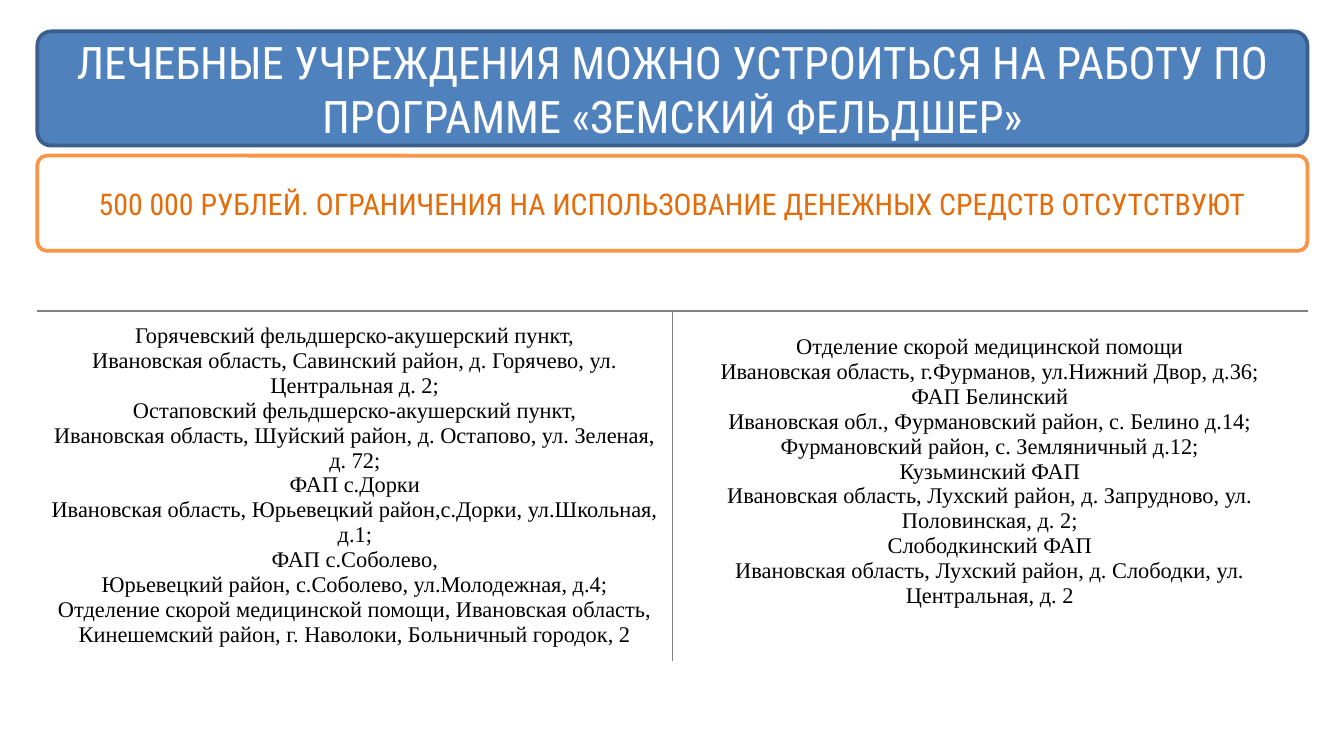
from lxml import etree
from pptx import Presentation
from pptx.dml.color import RGBColor
from pptx.enum import shapes, text
from pptx.oxml import ns
from pptx.util import Pt

LEFT, WIDTH = 20, 680.4
WHITE, GREY, BLACK = "FFFFFF", "808080", "000000"
LEFT_ADDRESSES = [
    "Горячевский фельдшерско-акушерский пункт,",
    "Ивановская область, Савинский район, д. Горячево, ул. Центральная д. 2;",
    "Остаповский фельдшерско-акушерский пункт,",
    "Ивановская область, Шуйский район, д. Остапово, ул. Зеленая, д. 72;",
    "ФАП с.Дорки",
    "Ивановская область, Юрьевецкий район,с.Дорки, ул.Школьная, д.1;",
    "ФАП с.Соболево,",
    "Юрьевецкий район, с.Соболево, ул.Молодежная, д.4;",
    "Отделение скорой медицинской помощи, Ивановская область, "
    "Кинешемский район, г. Наволоки, Больничный городок, 2",
]
RIGHT_ADDRESSES = [
    "Отделение скорой медицинской помощи",
    "Ивановская область, г.Фурманов, ул.Нижний Двор, д.36;",
    "ФАП Белинский",
    "Ивановская обл., Фурмановский район, с. Белино д.14;",
    "Фурмановский район, с. Земляничный д.12;",
    "Кузьминский ФАП",
    "Ивановская область, Лухский район, д. Запрудново, ул. Половинская, д. 2;",
    "Слободкинский ФАП",
    "Ивановская область, Лухский район, д. Слободки, ул. Центральная, д. 2",
]


def paint(color_format, color):
    color_format.rgb = RGBColor.from_string(color)


def fill_solid(fill, color):
    fill.solid()
    paint(fill.fore_color, color)


def format_text(text_frame, font_name, size, color):
    for paragraph in text_frame.paragraphs:
        paragraph.alignment = text.PP_ALIGN.CENTER
        for run in paragraph.runs:
            run.font.name = font_name
            run.font.size = Pt(size)
            paint(run.font.color, color)


def add_banner(slide, box, words, size, text_color, fill_color, line_color, rounding):
    shape = slide.shapes.add_shape(
        shapes.MSO_SHAPE.ROUNDED_RECTANGLE, *[Pt(length) for length in box])
    shape.adjustments[0] = rounding
    shape.shadow.inherit = False
    fill_solid(shape.fill, fill_color)
    paint(shape.line.color, line_color)
    shape.line.width = Pt(2)
    text_frame = shape.text_frame
    text_frame.word_wrap = True
    text_frame.vertical_anchor = text.MSO_ANCHOR.MIDDLE
    text_frame.text = words
    format_text(text_frame, "Roboto Condensed", size, text_color)


def set_borders(cell, left=WHITE, right=WHITE, top=WHITE, bottom=WHITE):
    properties = cell._tc.get_or_add_tcPr()
    sides = {"a:lnL": left, "a:lnR": right, "a:lnT": top, "a:lnB": bottom}
    for index, (tag, color) in enumerate(sides.items()):
        line = etree.Element(ns.qn(tag), w=str(Pt(1)))
        solid = etree.SubElement(line, ns.qn("a:solidFill"))
        etree.SubElement(solid, ns.qn("a:srgbClr"), val=color)
        properties.insert(index, line)


def add_address_table(slide, box, heading_height, columns):
    left, top, width, height = box
    frame = slide.shapes.add_table(
        2, len(columns), Pt(left), Pt(top), Pt(width), Pt(height))
    table = frame.table
    table.first_row = table.horz_banding = False
    table.rows[0].height = Pt(heading_height)
    table.rows[1].height = Pt(height - heading_height)
    for cell in table.iter_cells():
        cell.fill.background()
        cell.vertical_anchor = text.MSO_ANCHOR.MIDDLE

    heading = table.cell(0, 0)
    heading.merge(table.cell(0, len(columns) - 1))
    heading.margin_top = heading.margin_bottom = 0
    for index, addresses in enumerate(columns):
        set_borders(table.cell(0, index), bottom=GREY)
        cell = table.cell(1, index)
        cell.text_frame.text = "\n".join(addresses)
        format_text(cell.text_frame, "Times New Roman", 12, BLACK)
        set_borders(cell, top=GREY,
                    left=GREY if index else WHITE,
                    right=GREY if index < len(columns) - 1 else WHITE)
    # The shorter last column sits slightly above the middle.
    table.cell(1, len(columns) - 1).margin_bottom = Pt(18.6)


def main():
    presentation = Presentation()
    presentation.slide_width, presentation.slide_height = Pt(720), Pt(405)
    slide = presentation.slides.add_slide(presentation.slide_layouts[6])
    add_banner(slide, (LEFT, 16.8, WIDTH, 61.2),
               "ЛЕЧЕБНЫЕ УЧРЕЖДЕНИЯ МОЖНО УСТРОИТЬСЯ НА РАБОТУ ПО "
               "ПРОГРАММЕ «ЗЕМСКИЙ ФЕЛЬДШЕР»",
               24, WHITE, "4F81BD", "3A5F8C", 0.12)
    add_banner(slide, (LEFT, 83.4, WIDTH, 51),
               "500 000 РУБЛЕЙ. ОГРАНИЧЕНИЯ НА ИСПОЛЬЗОВАНИЕ "
               "ДЕНЕЖНЫХ СРЕДСТВ ОТСУТСТВУЮТ",
               16, "E46C0A", WHITE, "F79646", 0.1)
    add_address_table(slide, (LEFT, 140.6, WIDTH, 213), 26,
                      [LEFT_ADDRESSES, RIGHT_ADDRESSES])
    presentation.save("out.pptx")


if __name__ == "__main__":
    main()
